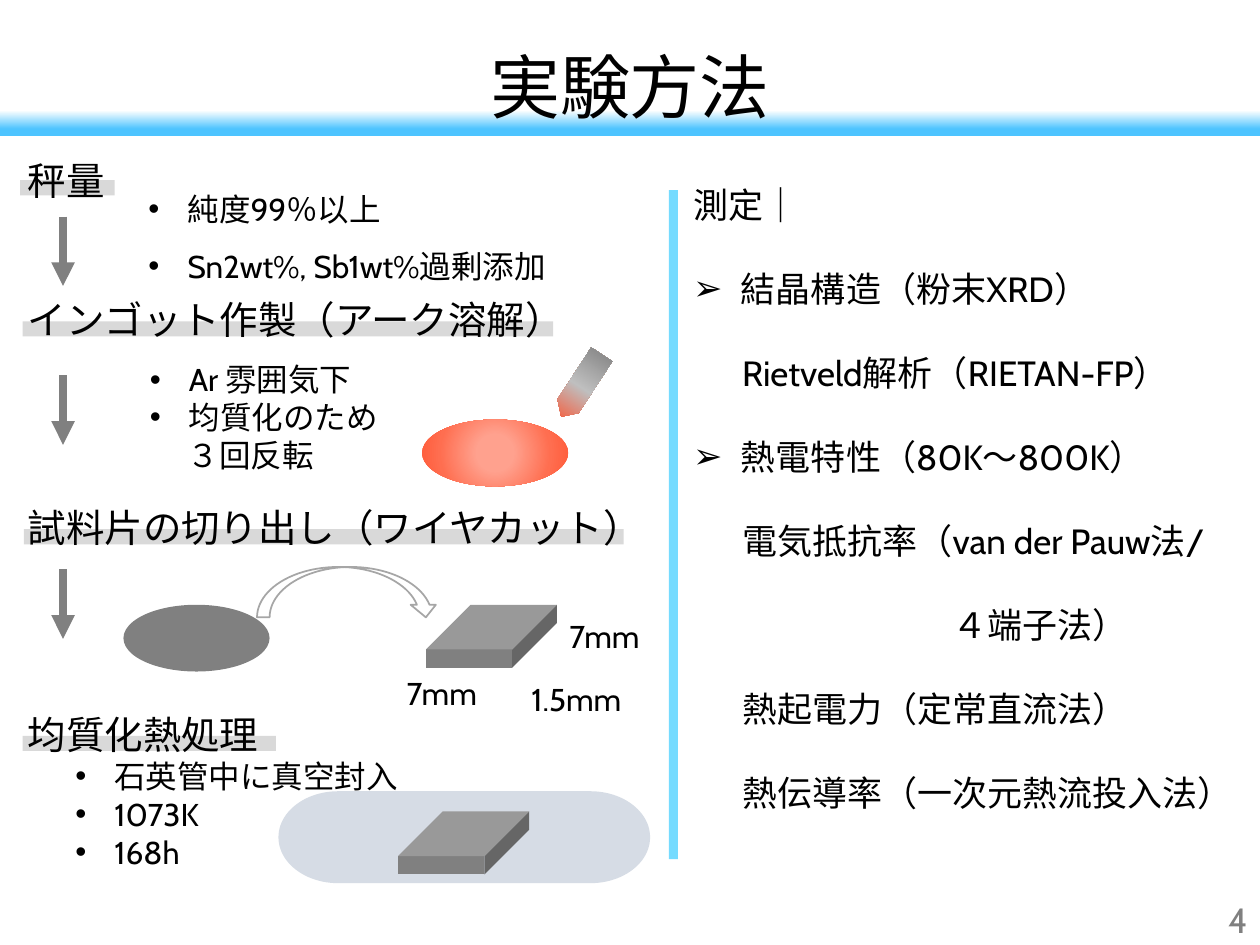
from lxml import etree
from pptx import Presentation
from pptx.dml.color import RGBColor
from pptx.enum.shapes import MSO_CONNECTOR, MSO_SHAPE
from pptx.enum.text import MSO_ANCHOR, MSO_AUTO_SIZE, PP_ALIGN
from pptx.oxml import parse_xml
from pptx.oxml.ns import nsdecls, qn
from pptx.util import Inches, Pt

THEME = {
    "font": "Cabin", "ink": "000000", "grey": "808080", "marker": "D9D9D9",
    "divider": "75DBFF", "outline": "A6A6A6", "quartz": "D6DCE5",
    "band": [(0, "FCFEFE"), (72, "4DC4FF")],
    "molten": [(0, "FFA18E"), (23, "FFA18E"), (69, "FF6E50"), (97, "FF5B39")],
    "electrode": [(0, "FF502C"), (48, "BFBFBF"), (100, "808080")],
    "title": 40, "step": 22, "measure": 20, "detail": 18,
}

prs = Presentation()
prs.slide_width, prs.slide_height = Inches(10), Inches(7.5)
slide = prs.slides.add_slide(prs.slide_layouts[5])


def add_figure(kind, place, fill=None, angle=None, line=None):
    """Draw a preset shape; a list of stops gives a linear or, without angle, radial gradient."""
    figure = slide.shapes.add_shape(kind, *map(Inches, place))
    figure.shadow.inherit = False
    if line:
        figure.line.color.rgb = RGBColor.from_string(line)
        figure.line.width = Pt(1)
    else:
        figure.line.fill.background()
    if fill is None:
        figure.fill.background()
    elif isinstance(fill, str):
        figure.fill.solid()
        figure.fill.fore_color.rgb = RGBColor.from_string(fill)
    else:
        stops = "".join(f'<a:gs pos="{pos * 1000}"><a:srgbClr val="{color}"/></a:gs>'
                        for pos, color in fill)
        if angle is None:
            course = ('<a:path path="circle"><a:fillToRect l="50000" t="50000" '
                      'r="50000" b="50000"/></a:path>')
        else:
            course = f'<a:lin ang="{angle * 60000}" scaled="0"/>'
        gradient = parse_xml(f'<a:gradFill {nsdecls("a")} rotWithShape="1">'
                             f'<a:gsLst>{stops}</a:gsLst>{course}</a:gradFill>')
        figure._element.spPr.find(qn("a:prstGeom")).addnext(gradient)
    return figure


def write(box, lines, size, color=THEME["ink"], inset=None, spacing=None,
          align=PP_ALIGN.LEFT, anchor=MSO_ANCHOR.TOP):
    """Fill a box with lines of (text, left margin, first-line indent, bullet)."""
    frame = box.text_frame
    layout = {"word_wrap": True, "auto_size": MSO_AUTO_SIZE.NONE, "vertical_anchor": anchor}
    if inset is not None:
        layout |= {f"margin_{side}": Inches(inset) for side in ("left", "top", "right", "bottom")}
    for name, value in layout.items():
        setattr(frame, name, value)
    for number, (text, margin, indent, bullet) in enumerate(lines):
        paragraph = frame.add_paragraph() if number else frame.paragraphs[0]
        paragraph.text = text
        properties = paragraph._p.get_or_add_pPr()
        properties.set("marL", str(Inches(margin)))
        properties.set("indent", str(Inches(indent)))
        if bullet:
            etree.SubElement(properties, qn("a:buFont")).set("typeface", "Arial")
            etree.SubElement(properties, qn("a:buChar")).set("char", bullet)
        paragraph.alignment = align
        if spacing:
            paragraph.line_spacing = spacing
        for name, value in {"name": THEME["font"], "size": Pt(size)}.items():
            setattr(paragraph.font, name, value)
        paragraph.font.color.rgb = RGBColor.from_string(color)


# Title over its band
add_figure(MSO_SHAPE.RECTANGLE, (0, 0.88, 10, 0.2), THEME["band"], angle=90)
title = slide.shapes.title
for name, value in {"left": 0.5, "top": 0.05, "width": 9, "height": 1.25}.items():
    setattr(title, name, Inches(value))
write(title, [("実験方法", 0, 0, None)], THEME["title"],
      align=PP_ALIGN.CENTER, anchor=MSO_ANCHOR.MIDDLE)
slide.shapes._spTree.append(title._element)

# Process steps with marker bars, set on a common line grid
FIRST_ROW, ROW_PITCH, STEP_HEIGHT = 1.43, 0.55, 0.44
steps = [
    ("秤量", 0, (0.16, 1.43, 0.75, 0.12)),
    ("インゴット作製（アーク溶解）", 2, (0.18, 2.55, 4.21, 0.12)),
    ("試料片の切り出し（ワイヤカット）", 5, (0.19, 4.2, 4.76, 0.12)),
    ("均質化熱処理", 8, (0.18, 5.84, 2.01, 0.12)),
]
for step, row, marker in steps:
    add_figure(MSO_SHAPE.RECTANGLE, marker, THEME["marker"])
    top = FIRST_ROW + row * ROW_PITCH - STEP_HEIGHT / 2
    heading = slide.shapes.add_textbox(*map(Inches, (0.18, top, 5.51, STEP_HEIGHT)))
    write(heading, [(step, 0, 0, None)], THEME["step"], inset=0.04, anchor=MSO_ANCHOR.MIDDLE)

# Arrows between the steps
for top in (1.72, 2.98, 4.52):
    arrow = slide.shapes.add_connector(
        MSO_CONNECTOR.STRAIGHT, *map(Inches, (0.5, top, 0.5, top + 0.55)))
    arrow.line.color.rgb = RGBColor.from_string(THEME["grey"])
    arrow.line.width = Pt(4.5)
    etree.SubElement(arrow.line._get_or_add_ln(), qn("a:tailEnd")).set("type", "triangle")
    etree.SubElement(arrow._element.spPr, qn("a:effectLst"))

# Arc melting: molten ingot and electrode
add_figure(MSO_SHAPE.OVAL, (3.35, 3.33, 1.16, 0.53), THEME["molten"])
electrode = add_figure(MSO_SHAPE.PENTAGON, (4.32, 2.96, 0.59, 0.2), THEME["electrode"], angle=180)
electrode.rotation = 123.1

# Cutting: ingot to sample, then the sample in its quartz tube
add_figure(MSO_SHAPE.OVAL, (0.98, 4.8, 1.16, 0.53), THEME["grey"])
add_figure(MSO_SHAPE.CURVED_DOWN_ARROW, (2.04, 4.5, 1.44, 0.4), line=THEME["outline"])
add_figure(MSO_SHAPE.FLOWCHART_TERMINATOR, (2.21, 6.28, 2.95, 0.73), THEME["quartz"])
for left, top in ((3.38, 4.8), (3.16, 6.44)):
    sample = add_figure(MSO_SHAPE.CUBE, (left, top, 1.04, 0.5), THEME["grey"])
    sample.adjustments[0] = 0.71

# Sample dimensions
for dimension, left, top in (("7mm", 3.13, 5.3), ("7mm", 4.42, 4.85), ("1.5mm", 4.12, 5.35)):
    label = slide.shapes.add_textbox(*map(Inches, (left, top, 0.97, 0.4)))
    write(label, [(dimension, 0, 0, None)], THEME["detail"])

# Step details
DOT = (0.31, -0.31, "•")
details = [
    ((1.08, 1.31, 3.78, 0.97), 1.5,
     [("純度99％以上", *DOT), ("Sn2wt%, Sb1wt%過剰添加", *DOT)]),
    ((1.09, 2.81, 2.68, 1.01), None,
     [("Ar 雰囲気下", *DOT), ("均質化のため", *DOT), ("３回反転", 0, 0.3, None)]),
    ((0.5, 5.96, 3.34, 1.01), None,
     [("石英管中に真空封入", *DOT), ("1073K", *DOT), ("168h", *DOT)]),
]
for place, spacing, lines in details:
    detail = slide.shapes.add_textbox(*map(Inches, place))
    write(detail, lines, THEME["detail"], spacing=spacing)

# Measurements, right of the divider
add_figure(MSO_SHAPE.RECTANGLE, (5.31, 1.51, 0.07, 5.31), THEME["divider"])
ARROWHEAD = (0.38, -0.38, "➢")
METHOD = (0.5, -0.11, None)
measurements = slide.shapes.add_textbox(*map(Inches, (5.46, 1.1, 4.52, 5.38)))
write(measurements, [
    ("測定｜", 0, 0, None),
    ("結晶構造（粉末XRD）", *ARROWHEAD),
    ("Rietveld解析（RIETAN-FP）", 0, 0.39, None),
    ("熱電特性（80K～800K）", *ARROWHEAD),
    ("電気抵抗率（van der Pauw法/", *METHOD),
    ("４端子法）", 2.06, 0, None),
    ("熱起電力（定常直流法）", *METHOD),
    ("熱伝導率（一次元熱流投入法）", *METHOD),
], THEME["measure"], inset=0.04, spacing=2, anchor=MSO_ANCHOR.MIDDLE)

# Page number
page = slide.shapes.add_textbox(*map(Inches, (7.75, 7.1, 2.25, 0.4)))
write(page, [("4", 0, 0, None)], THEME["measure"], THEME["grey"],
      align=PP_ALIGN.RIGHT, anchor=MSO_ANCHOR.MIDDLE)

prs.save("out.pptx")
